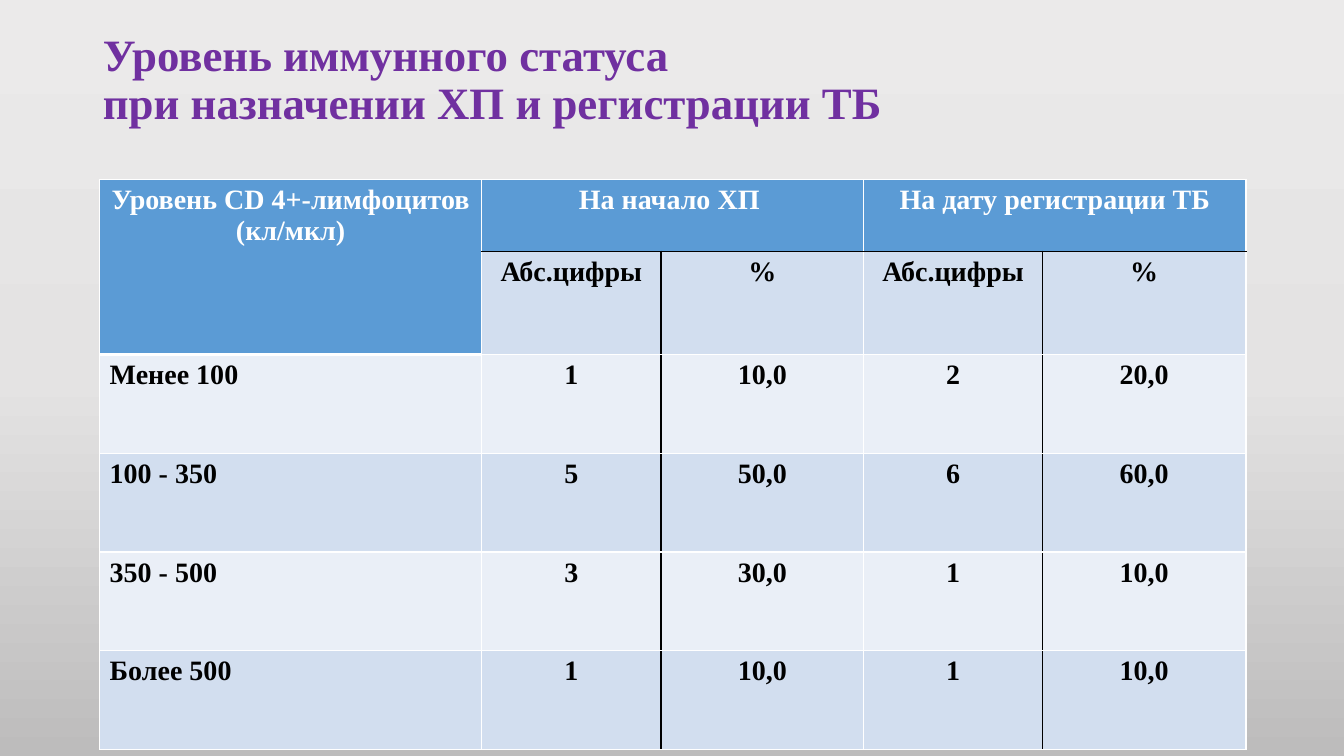
"""Slide with a table of immune status at the start of prophylaxis and at TB registration."""
from copy import deepcopy
from dataclasses import dataclass

from pptx import Presentation
from pptx.dml.color import RGBColor
from pptx.enum import text
from pptx.oxml import ns, parse_xml
from pptx.util import Cm, Pt

TITLE = "Уровень иммунного статуса\nпри назначении ХП и регистрации ТБ"
ROWS = [
    ("Уровень CD 4+-лимфоцитов (кл/мкл)", "На начало ХП ", "", "На дату регистрации ТБ", ""),
    ("", "Абс.цифры", "%", "Абс.цифры", "%"),
    ("Менее 100", "1", "10,0", "2", "20,0"),
    ("100 - 350", "5", "50,0", "6", "60,0"),
    ("350 - 500", "3", "30,0", "1", "10,0"),
    ("Более 500", "1", "10,0", "1", "10,0"),
]
MERGES = [((0, 0), (1, 0)), ((0, 1), (0, 2)), ((0, 3), (0, 4))]
COLUMN_WIDTHS = [9.63, 4.52, 5.11, 4.5, 5.13]
ROW_HEIGHTS = [1.81, 2.6] + [2.49] * 4
SPLIT_COLUMNS = [(1, 2), (3, 4)]


@dataclass(frozen=True)
class Theme:
    """Colours, font and type sizes of the slide."""
    font: str = "Times New Roman"
    title_size: int = 32
    table_size: int = 20
    title: str = "7030A0"
    header: str = "5B9BD5"
    bands: tuple = ("EAEFF7", "D2DEEF")
    light: str = "FFFFFF"
    dark: str = "000000"
    background: tuple = ((0, "EBEAEA"), (0.5, "E4E3E3"), (1, "BDBCBC"))


THEME = Theme()


def write(frame, words, *, size, color, align=text.PP_ALIGN.LEFT, spacing=None):
    """Put bold text into a frame."""
    paragraph = frame.paragraphs[0]
    paragraph.text = words
    paragraph.alignment = align
    paragraph.line_spacing = spacing
    for run in paragraph.runs:
        run.font.name = THEME.font
        run.font.size = Pt(size)
        run.font.bold = True
        run.font.color.rgb = RGBColor.from_string(color)


def paint_background(slide):
    """Fill the background with a vertical gradient."""
    fill = slide.background.fill
    fill.gradient()
    fill.gradient_angle = 270
    stop_list = slide.element.xpath(".//a:gsLst")[0]
    stop_list.append(deepcopy(stop_list[-1]))
    for stop, (position, color) in zip(fill.gradient_stops, THEME.background):
        stop.position = position
        stop.color.rgb = RGBColor.from_string(color)


def is_header(row, column):
    """Tell whether a cell belongs to the blue header."""
    return row == 0 or (row == 1 and column == 0)


def draw_borders(cell, row, column):
    """Draw the four borders of a cell, dark inside the column groups."""
    dark_sides = {
        "L": row > 0 and column in [right for left, right in SPLIT_COLUMNS],
        "R": row > 0 and column in [left for left, right in SPLIT_COLUMNS],
        "T": row == 1 and column > 0,
        "B": row == 0 and column > 0,
    }
    properties = cell._tc.get_or_add_tcPr()
    for index, (side, dark) in enumerate(dark_sides.items()):
        thick = side == "B" and column == 0 and row < 2
        color = THEME.dark if dark else THEME.light
        properties.insert(index, parse_xml(
            f'<a:ln{side} {ns.nsdecls("a")} w="{Pt(3 if thick else 1)}">'
            f'<a:solidFill><a:srgbClr val="{color}"/></a:solidFill></a:ln{side}>'))


def add_status_table(slide):
    """Add the table, its cells and its merged headings."""
    frame = slide.shapes.add_table(
        len(ROWS), len(COLUMN_WIDTHS), Cm(2.51), Cm(4.52),
        Cm(sum(COLUMN_WIDTHS)), Cm(sum(ROW_HEIGHTS)))
    table = frame.table
    table.horz_banding = False
    for column, width in zip(table.columns, COLUMN_WIDTHS):
        column.width = Cm(width)
    for row, height in zip(table.rows, ROW_HEIGHTS):
        row.height = Cm(height)
    for start, end in MERGES:
        table.cell(*start).merge(table.cell(*end))
    for row, values in enumerate(ROWS):
        for column, value in enumerate(values):
            cell = table.cell(row, column)
            header = is_header(row, column)
            cell.fill.solid()
            cell.fill.fore_color.rgb = RGBColor.from_string(
                THEME.header if header else THEME.bands[row % 2])
            draw_borders(cell, row, column)
            if value:
                centred = header or column > 0
                write(cell.text_frame, value, size=THEME.table_size,
                      color=THEME.light if header else THEME.dark,
                      align=text.PP_ALIGN.CENTER if centred else text.PP_ALIGN.LEFT)


def main():
    """Build and save the presentation."""
    presentation = Presentation()
    presentation.slide_width, presentation.slide_height = Cm(33.87), Cm(19.05)
    slide = presentation.slides.add_slide(presentation.slide_layouts[5])
    paint_background(slide)
    title = slide.shapes.title
    title.left, title.top, title.width, title.height = Cm(2.34), Cm(0.43), Cm(29.21), Cm(3.23)
    title.text_frame.vertical_anchor = text.MSO_ANCHOR.MIDDLE
    title.text_frame.auto_size = text.MSO_AUTO_SIZE.NONE
    write(title.text_frame, TITLE, size=THEME.title_size, color=THEME.title, spacing=0.9)
    add_status_table(slide)
    presentation.save("out.pptx")


if __name__ == "__main__":
    main()
